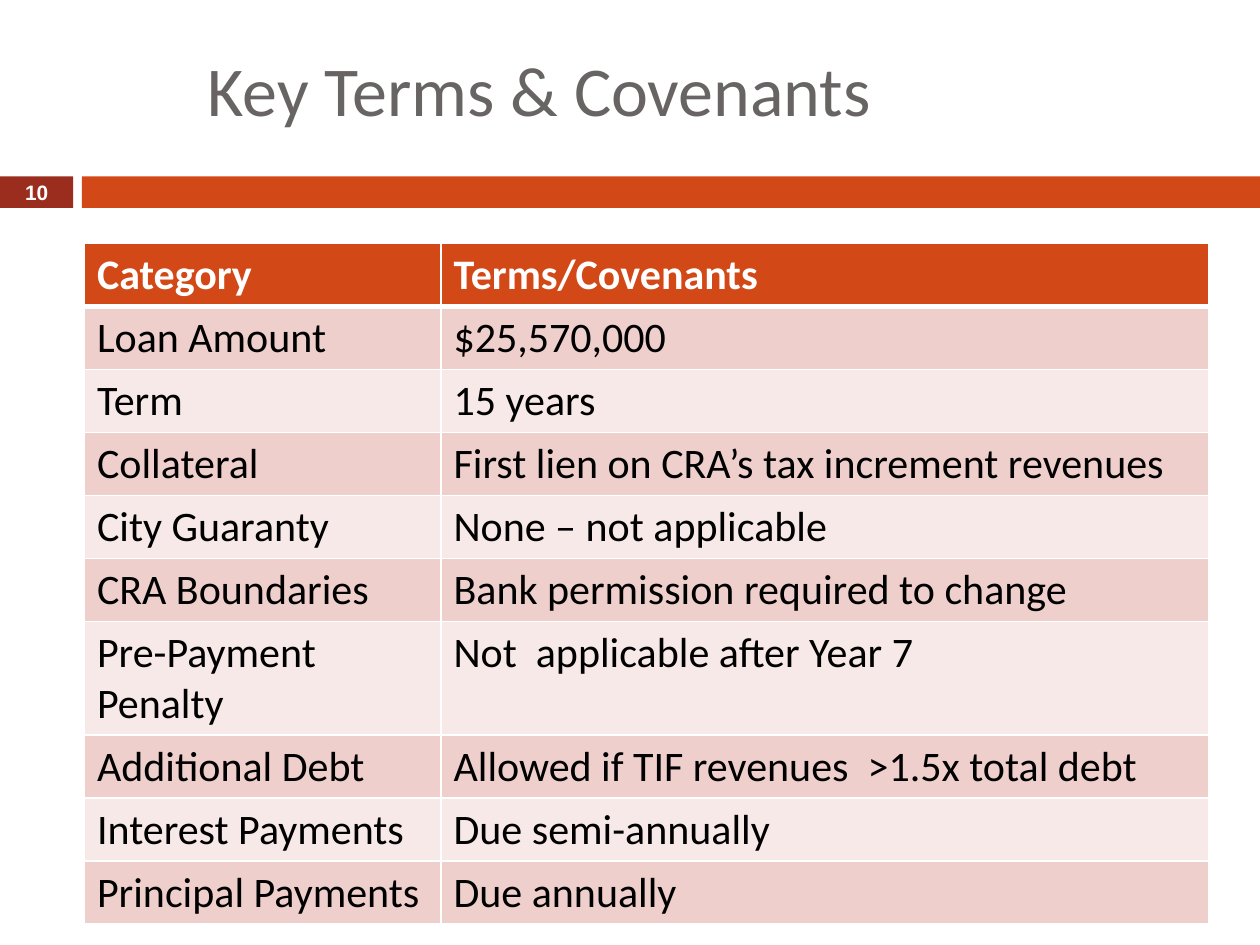
"""Build the Key Terms & Covenants slide with its loan terms table."""
from lxml.etree import SubElement
from pptx import Presentation
from pptx.dml.color import RGBColor
from pptx.enum.shapes import MSO_SHAPE as Shape
from pptx.enum.text import MSO_ANCHOR as Anchor, PP_ALIGN as Align
from pptx.oxml.ns import qn
from pptx.util import Inches, Pt

WHITE = RGBColor(0xFF, 0xFF, 0xFF)
BLACK = RGBColor(0, 0, 0)
GREY = RGBColor(0x69, 0x64, 0x64)
ORANGE = RGBColor(0xD3, 0x48, 0x17)
DARK_RED = RGBColor(0x9B, 0x2D, 0x1F)
BANDS = (RGBColor(0xF7, 0xE9, 0xE8), RGBColor(0xEF, 0xCF, 0xCC))

TERMS = [
    ("Category", "Terms/Covenants"),
    ("Loan Amount", "$25,570,000"),
    ("Term", "15 years"),
    ("Collateral", "First lien on CRA’s tax increment revenues"),
    ("City Guaranty", "None – not applicable"),
    ("CRA Boundaries", "Bank permission required to change"),
    ("Pre-Payment Penalty", "Not  applicable after Year 7"),
    ("Additional Debt", "Allowed if TIF revenues  >1.5x total debt"),
    ("Interest Payments", "Due semi-annually"),
    ("Principal Payments", "Due annually"),
]


class SlideBuilder:
    def __init__(self, slide, font="Calibri"):
        self.slide = slide
        self.font = font

    def format_text(self, text_frame, size, color, bold=False, font=None):
        for paragraph in text_frame.paragraphs:
            for run in paragraph.runs:
                run.font.name = font or self.font
                run.font.size = Pt(size)
                run.font.bold = bold
                run.font.color.rgb = color

    def bar(self, left, top, width, height, color):
        shape = self.slide.shapes.add_shape(
            Shape.RECTANGLE, Inches(left), Inches(top), Inches(width), Inches(height))
        shape.shadow.inherit = False
        shape.fill.solid()
        shape.fill.fore_color.rgb = color
        shape.line.fill.background()

    def text(self, text, left, top, width, height, size, color, align=Align.LEFT, **style):
        box = self.slide.shapes.add_textbox(
            Inches(left), Inches(top), Inches(width), Inches(height))
        text_frame = box.text_frame
        text_frame.word_wrap = True
        text_frame.vertical_anchor = Anchor.MIDDLE
        text_frame.text = text
        text_frame.paragraphs[0].alignment = align
        self.format_text(text_frame, size, color, **style)

    def border(self, cell, side, width):
        properties = cell._tc.get_or_add_tcPr()
        line = SubElement(properties, qn(f"a:ln{side}"), w=str(Pt(width)))
        fill = SubElement(line, qn("a:solidFill"))
        SubElement(fill, qn("a:srgbClr"), val=str(WHITE))

    def table(self, rows, left, top, column_widths, row_height, size):
        table = self.slide.shapes.add_table(
            len(rows), len(column_widths), Inches(left), Inches(top),
            Inches(sum(column_widths)), Inches(row_height * len(rows))).table
        for column, width in zip(table.columns, column_widths):
            column.width = Inches(width)
        for row_index, (row, values) in enumerate(zip(table.rows, rows)):
            row.height = Inches(row_height)
            header = row_index == 0
            for cell, value in zip(row.cells, values):
                cell.text_frame.text = value
                self.format_text(cell.text_frame, size, WHITE if header else BLACK, header)
                for side in "LRTB":
                    thick = (header and side == "B") or (row_index == 1 and side == "T")
                    self.border(cell, side, 3 if thick else 1)
                cell.fill.solid()
                cell.fill.fore_color.rgb = ORANGE if header else BANDS[row_index % 2]


def main():
    presentation = Presentation()
    presentation.slide_width = Inches(10)
    presentation.slide_height = Inches(7.5)
    builder = SlideBuilder(presentation.slides.add_slide(presentation.slide_layouts[6]))
    builder.bar(0, 1.4, 0.58, 0.25, DARK_RED)
    builder.bar(0.65, 1.4, 9.35, 0.25, ORANGE)
    builder.text("Key Terms & Covenants", 1.55, 0.08, 9, 1.25, 40, GREY)
    builder.text("10", 0, 1.39, 0.58, 0.27, 11.9, WHITE, Align.CENTER, bold=True, font="Arial")
    builder.table(TERMS, 0.67, 1.93, (2.83, 6.09), 0.41, 24)
    presentation.save("out.pptx")


if __name__ == "__main__":
    main()
